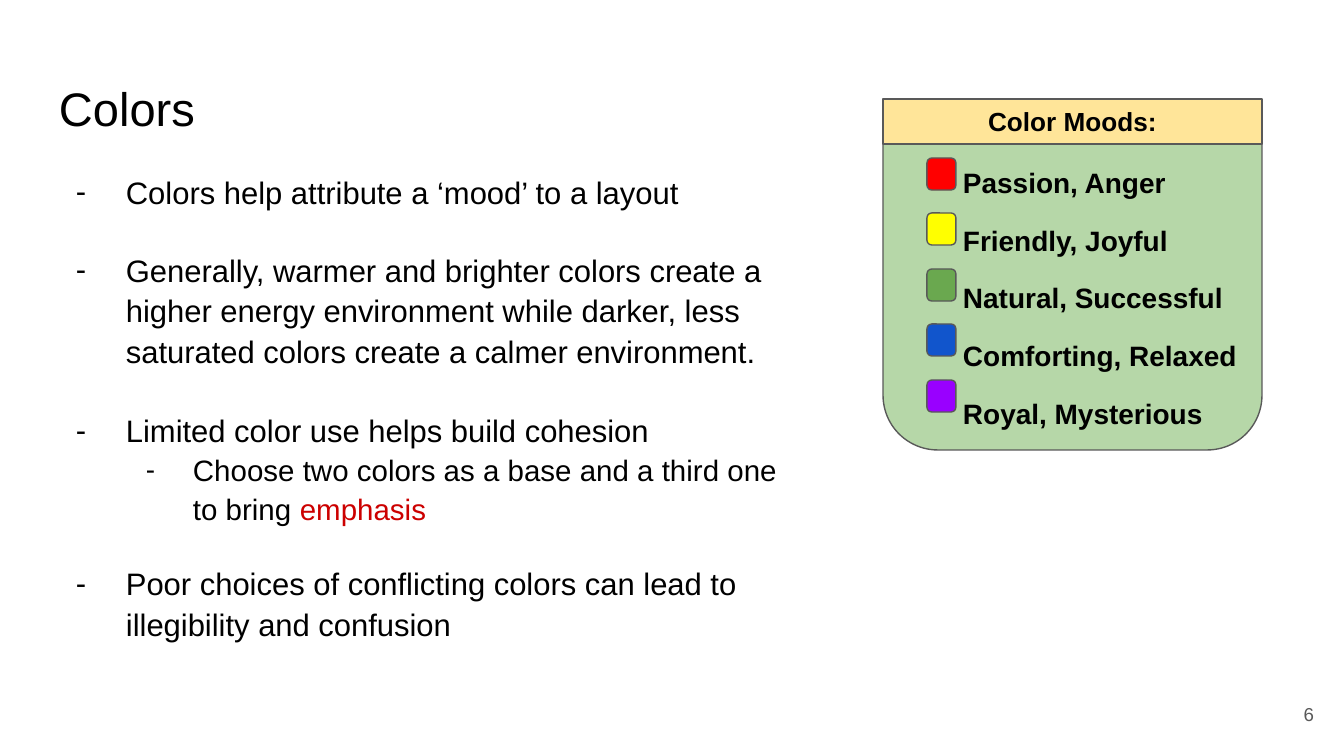
"""Build the slide on how colors set the mood of a layout."""
import lxml.etree
import pptx
import pptx.dml.color
import pptx.enum.shapes
import pptx.enum.text
import pptx.oxml.ns
import pptx.util

ALIGN = pptx.enum.text.PP_ALIGN
ANCHOR = pptx.enum.text.MSO_ANCHOR
SHAPE = pptx.enum.shapes.MSO_SHAPE
BLACK, GRAY, RED = "000000", "595959", "CC0000"


def px(length):
    return pptx.util.Emu(round(length * 914400 / 134.4))


def color(value):
    return pptx.dml.color.RGBColor.from_string(value)


def set_bullet(properties, mark, percent):
    def add(tag, **attributes):
        return lxml.etree.SubElement(properties, pptx.oxml.ns.qn(tag), **attributes)

    lxml.etree.SubElement(add("a:buClr"), pptx.oxml.ns.qn("a:srgbClr"), val=BLACK)
    add("a:buSzPct", val=str(percent * 1000))
    add("a:buFont", typeface="Arial")
    add("a:buChar", char=mark)


def write(frame, text, *, size, fill=BLACK, bold=False, align=ALIGN.LEFT,
          spacing=1.0, before=0, left=0, hanging=0, level=0,
          bullet=None, bullet_percent=100, emphasis=""):
    paragraph = frame.paragraphs[0] if not frame.text else frame.add_paragraph()
    paragraph.alignment = align
    paragraph.level = level
    paragraph.line_spacing = spacing
    paragraph.space_before = pptx.util.Pt(before)
    properties = paragraph._p.get_or_add_pPr()
    properties.set("marL", str(px(left)))
    properties.set("indent", str(px(-hanging)))
    if bullet:
        set_bullet(properties, bullet, bullet_percent)
    for part, shade in ((text, fill), (emphasis, RED)):
        if part:
            run = paragraph.add_run()
            run.text = part
            run.font.name = "Arial"
            run.font.size = pptx.util.Pt(size)
            run.font.bold = bold
            run.font.color.rgb = color(shade)


class Canvas:
    """Holds the house style and the slide being filled."""

    outline = GRAY
    outline_width = 0.75
    inset = 13

    def __init__(self, presentation):
        self.slide = presentation.slides.add_slide(presentation.slide_layouts[5])
        self.shapes = self.slide.shapes

    def frame(self, holder, anchor):
        frame = holder.text_frame
        frame.word_wrap = True
        frame.auto_size = pptx.enum.text.MSO_AUTO_SIZE.NONE
        frame.vertical_anchor = anchor
        frame.margin_left = frame.margin_right = px(self.inset)
        frame.margin_top = frame.margin_bottom = px(self.inset)
        return frame

    def title(self, text, left, top, width, height):
        title = self.slide.shapes.title
        title.left, title.top = px(left), px(top)
        title.width, title.height = px(width), px(height)
        write(self.frame(title, ANCHOR.TOP), text, size=25.2)

    def text(self, left, top, width, height, anchor=ANCHOR.TOP):
        box = self.shapes.add_textbox(px(left), px(top), px(width), px(height))
        return self.frame(box, anchor)

    def shape(self, kind, left, top, width, height, fill, adjustments=()):
        shape = self.shapes.add_shape(kind, px(left), px(top), px(width), px(height))
        shape.shadow.inherit = False
        shape.fill.solid()
        shape.fill.fore_color.rgb = color(fill)
        shape.line.color.rgb = color(self.outline)
        shape.line.width = pptx.util.Pt(self.outline_width)
        for index, value in enumerate(adjustments):
            shape.adjustments[index] = value
        return shape

    def group(self):
        self.shapes = self.slide.shapes.add_group_shape().shapes


def add_advice(canvas):
    advice = canvas.text(46, 157, 759, 503)
    main = dict(size=16.6, spacing=1.09, left=67, hanging=50, bullet="-")
    detail = dict(main, size=15.8, left=134, hanging=47, level=1, bullet_percent=94)
    write(advice, "Colors help attribute a ‘mood’ to a layout", **main)
    write(advice, "Generally, warmer and brighter colors create a higher energy "
          "environment while darker, less saturated colors create a calmer "
          "environment.", before=20, **main)
    write(advice, "Limited color use helps build cohesion", before=21, **main)
    write(advice, "Choose two colors as a base and a third one to bring ",
          emphasis="emphasis", **detail)
    write(advice, "Poor choices of conflicting colors can lead to illegibility "
          "and confusion", before=19, **main)


def add_mood_card(canvas):
    moods = (
        ("FF0000", "Passion, Anger"),
        ("FFFF00", "Friendly, Joyful"),
        ("6AA84F", "Natural, Successful"),
        ("1155CC", "Comforting, Relaxed"),
        ("9900FF", "Royal, Mysterious"),
    )
    canvas.group()
    card = canvas.shape(SHAPE.ROUND_2_SAME_RECTANGLE, 883, 122, 379, 328,
                        "B6D7A8", (0.167, 0))
    card.rotation = 180
    labels = canvas.text(883, 151, 374, 288)
    for row, (swatch, mood) in enumerate(moods):
        write(labels, mood, size=15, bold=True, left=67, spacing=1.05,
              before=12 if row else 0)
        canvas.shape(SHAPE.ROUNDED_RECTANGLE, 927, 158 + row * 111 // 2, 29, 32,
                     swatch, (0.167,))
    heading = canvas.shape(SHAPE.RECTANGLE, 883, 99, 379, 45, "FFE599")
    write(canvas.frame(heading, ANCHOR.MIDDLE), "Color Moods:", size=14,
          bold=True, align=ALIGN.CENTER)


def main():
    presentation = pptx.Presentation()
    presentation.slide_width, presentation.slide_height = px(1344), px(756)
    canvas = Canvas(presentation)
    canvas.title("Colors", 46, 66, 1252, 84)
    add_advice(canvas)
    page_number = canvas.text(1246, 685, 81, 58, ANCHOR.MIDDLE)
    write(page_number, "6", size=10, fill=GRAY, align=ALIGN.RIGHT)
    add_mood_card(canvas)
    presentation.save("out.pptx")


if __name__ == "__main__":
    main()
